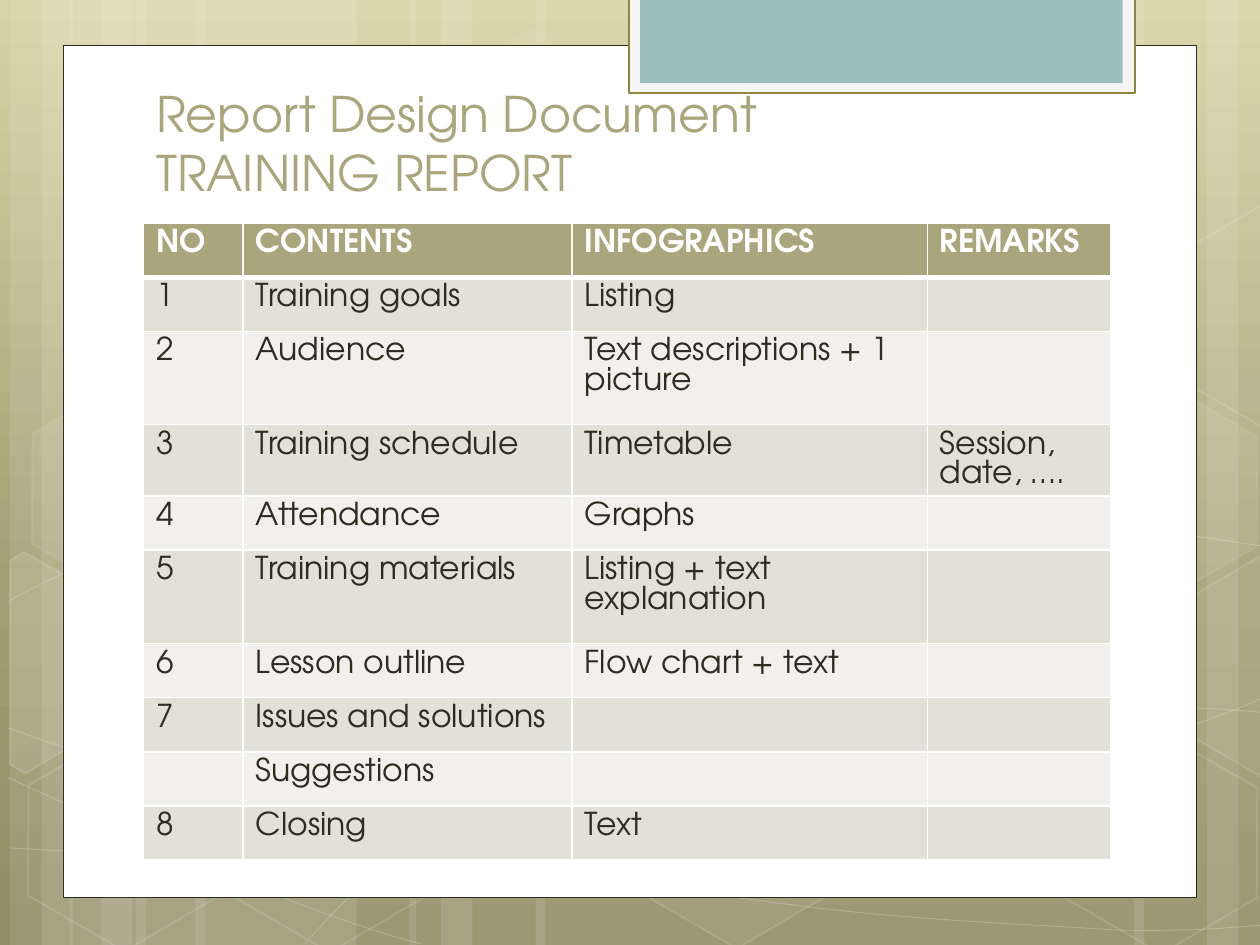
from copy import deepcopy
from dataclasses import dataclass
from lxml.etree import SubElement
from pptx import Presentation
from pptx.dml.color import RGBColor
from pptx.enum.shapes import MSO_SHAPE
from pptx.enum.text import MSO_ANCHOR, MSO_AUTO_SIZE, PP_ALIGN
from pptx.oxml.ns import qn
from pptx.util import Inches, Pt


@dataclass(frozen=True)
class Theme:
    font: str = "TeX Gyre Adventor"
    title_size: int = 28
    table_size: int = 18
    white: str = "FFFFFF"
    ink: str = "2F2B20"
    accent: str = "A9A57C"
    bands: tuple = ("E2E1D7", "F1F0EC")
    tab_frame: str = "F5F5F5"
    tab_line: str = "8D873E"
    tab: str = "9CBEBD"
    backdrop: tuple = ((0, "D7D3A4"), (0.62, "A29F74"), (1, "918D65"))


THEME = Theme()
SLIDE_WIDTH, SLIDE_HEIGHT = 10, 7.5

TITLE_LINES = ["Report Design Document", "TRAINING REPORT"]
ROWS = [
    ("NO", "CONTENTS", "INFOGRAPHICS", "REMARKS"),
    ("1", "Training goals", "Listing", ""),
    ("2", "Audience", "Text descriptions + 1 picture", ""),
    ("3", "Training schedule", "Timetable", "Session, date, …."),
    ("4", "Attendance", "Graphs", ""),
    ("5", "Training materials", "Listing + text explanation", ""),
    ("6", "Lesson outline", "Flow chart + text", ""),
    ("7", "Issues and solutions", "", ""),
    ("", "Suggestions", "", ""),
    ("8", "Closing", "Text", ""),
]
COLUMN_WIDTHS = [0.79, 2.61, 2.82, 1.46]
ROW_HEIGHT, TALL_ROW_HEIGHT = 0.43, 0.74
TALL_ROWS = (2, 5)
CONTENT_LEFT, CONTENT_WIDTH = 1.14, sum(COLUMN_WIDTHS)

STRIPES = [
    (1.08, 1.75), (0.08, 0.5), (0.33, 0.83), (1.55, 1.75), (0.55, 0.5), (0.8, 0.83),
    (7.33, 1.75), (9.58, 0.5), (9, 0.83), (4.25, 3.08), (3.25, 0.5), (3.5, 0.83),
]
CURVES = [
    [(0.07, 6.73), (0.61, 6.76), (1.15, 6.79), (1.9, 6.78), (2.65, 6.77), (3.58, 6.75), (4.58, 6.65),
     (5.58, 6.55), (7, 6.36), (7.92, 6.17), (8.83, 5.98), (9.77, 5.68), (10.07, 5.51)],
    [(0.07, 4.77), (0.36, 4.61), (0.65, 4.46), (1.21, 4.31), (1.78, 4.16), (2.59, 3.94), (3.47, 3.87),
     (4.36, 3.8), (5.44, 3.79), (6.54, 3.87), (7.64, 3.95), (9.47, 4.26), (10.07, 4.34)],
    [(0.06, 6.17), (1.27, 6.72), (2.47, 7.27), (3.34, 7.49)],
    [(0.07, 5.78), (0.38, 5.89), (0.7, 6), (1.28, 6.16), (1.86, 6.31), (2.73, 6.56), (3.57, 6.73),
     (4.4, 6.9), (5.45, 7.08), (6.28, 7.18), (7.11, 7.29), (8, 7.33), (8.53, 7.36),
     (9.05, 7.4), (9.19, 7.38), (9.45, 7.38), (9.71, 7.37), (9.89, 7.35), (10.07, 7.34)],
    [(2.42, 7.49), (2.6, 7.29), (2.78, 7.09), (3.02, 6.91), (3.26, 6.73), (3.6, 6.53), (3.88, 6.39),
     (4.16, 6.25), (4.33, 6.19), (4.7, 6.09), (5.06, 5.99), (5.73, 5.85), (6.08, 5.78),
     (6.44, 5.71), (6.49, 5.71), (6.8, 5.69), (7.11, 5.66), (7.6, 5.63), (7.94, 5.62),
     (8.29, 5.61), (8.86, 5.62), (8.86, 5.62), (9.08, 5.62), (9.31, 5.62), (9.53, 5.62),
     (9.71, 5.63), (9.88, 5.64), (9.97, 5.65), (10.06, 5.66), (10.03, 5.65), (10.06, 5.66)],
]
HEXAGON_SIZE = (1.75, 1.52)
HEXAGONS = [
    (3.34, 0.36, 4, 8), (4.97, 5.89, 6, 12), (0.11, 5.91, 0, 12),
    (0.14, 3.12, 7, 8), (1.74, 5.92, 0, 12), (7.53, 4.53, 10, 12),
    (8.34, 5.93, 0, 12), (8.34, 3.14, 7, 8),
]
CUT_HEXAGONS = [
    ([(0.08, 4.45), (0.19, 4.38), (0.96, 4.82), (0.95, 5.7), (0.2, 6.14), (0.08, 6.07)], 10),
    ([(9.26, 4.85), (10.01, 4.41), (10.09, 4.46), (10.09, 6.13), (10.02, 6.17), (9.26, 5.73)], 4),
    ([(9.26, 2.07), (10.01, 1.63), (10.1, 1.68), (10.09, 3.35), (10.02, 3.39), (9.26, 2.95)], 0),
]
PANELS = [
    ((0.5, 0.36, 9, 6.76), THEME.white, THEME.ink, 0.5),
    ((4.99, -0.02, 4.02, 0.76), THEME.tab_frame, THEME.tab_line, 1.25),
    ((5.08, -0.02, 3.83, 0.68), THEME.tab, None, 0),
]


def set_opacity(fill, percent):
    color = fill._xPr.find(qn("a:solidFill"))[0]
    SubElement(color, qn("a:alpha"), val=str(percent * 1000))


def paint(shape, fill=None, opacity=100, line=None, width=0, line_opacity=100):
    shape.shadow.inherit = False
    for target, color, percent in ((shape.fill, fill, opacity), (shape.line.fill, line, line_opacity)):
        if color is None or percent == 0:
            target.background()
            continue
        target.solid()
        target.fore_color.rgb = RGBColor.from_string(color)
        if percent < 100:
            set_opacity(target, percent)
    if line:
        shape.line.width = Pt(width)


def add_box(slide, kind, box):
    return slide.shapes.add_shape(kind, *map(Inches, box))


def add_outline(slide, points, close):
    corners = [(Inches(x), Inches(y)) for x, y in points]
    builder = slide.shapes.build_freeform(*corners[0], scale=1)
    builder.add_line_segments(corners[1:], close=close)
    return builder.convert_to_shape()


def add_curve(slide, points):
    shape = add_outline(slide, points, False)
    outline = shape._element.find(".//" + qn("a:path"))
    segments = outline.findall(qn("a:lnTo"))
    for start in range(0, len(segments), 3):
        bezier = SubElement(outline, qn("a:cubicBezTo"))
        for segment in segments[start:start + 3]:
            bezier.append(segment[0])
            outline.remove(segment)
    return shape


def add_run(paragraph, text, size, color, bold=False):
    run = paragraph.add_run()
    run.text = text
    run.font.name, run.font.size, run.font.bold = THEME.font, Pt(size), bold
    run.font.color.rgb = RGBColor.from_string(color)


def add_backdrop(slide):
    fill = slide.background.fill
    fill.gradient()
    fill.gradient_angle = 270
    stop_list = slide.element.find(".//" + qn("a:gsLst"))
    stop_list.append(deepcopy(stop_list[-1]))
    for stop, (position, color) in zip(fill.gradient_stops, THEME.backdrop):
        stop.position = position
        stop.color.rgb = RGBColor.from_string(color)
    for left, width in STRIPES:
        stripe = add_box(slide, MSO_SHAPE.RECTANGLE, (left, 0, width, SLIDE_HEIGHT))
        paint(stripe, THEME.white, 10)
    for points in CURVES:
        paint(add_curve(slide, points), line=THEME.white, width=0.5, line_opacity=20)
    for left, top, opacity, line_opacity in HEXAGONS:
        hexagon = add_box(slide, MSO_SHAPE.HEXAGON, (left, top, *HEXAGON_SIZE))
        hexagon.adjustments[0] = 0.285
        hexagon.rotation = 30
        paint(hexagon, THEME.white, opacity, THEME.white, 1, line_opacity)
    for points, opacity in CUT_HEXAGONS:
        paint(add_outline(slide, points, True), THEME.white, opacity, THEME.white, 1, 12)
    for box, fill_color, line_color, width in PANELS:
        paint(add_box(slide, MSO_SHAPE.RECTANGLE, box), fill_color, line=line_color, width=width)


def add_title(slide):
    title = slide.shapes.title
    slide.shapes._spTree.append(title._element)
    title.left, title.top, title.width, title.height = map(Inches, (CONTENT_LEFT, 0.91, CONTENT_WIDTH, 0.74))
    frame = title.text_frame
    frame.word_wrap, frame.auto_size = True, MSO_AUTO_SIZE.NONE
    frame.vertical_anchor = MSO_ANCHOR.BOTTOM
    paragraph = frame.paragraphs[0]
    paragraph.alignment = PP_ALIGN.LEFT
    for index, line in enumerate(TITLE_LINES):
        if index:
            paragraph.add_line_break()
        add_run(paragraph, line, THEME.title_size, THEME.accent)


def set_borders(cell, row):
    widths = {"L": 1, "R": 1, "T": 3 if row == 1 else 1, "B": 3 if row == 0 else 1}
    properties = cell._tc.get_or_add_tcPr()
    for side, width in widths.items():
        border = SubElement(properties, qn("a:ln" + side), w=str(Pt(width)))
        SubElement(SubElement(border, qn("a:solidFill")), qn("a:srgbClr"), val=THEME.white)


def add_contents_table(slide):
    heights = [TALL_ROW_HEIGHT if row in TALL_ROWS else ROW_HEIGHT for row in range(len(ROWS))]
    box = map(Inches, (CONTENT_LEFT, 1.77, CONTENT_WIDTH, sum(heights)))
    table = slide.shapes.add_table(len(ROWS), len(COLUMN_WIDTHS), *box).table
    for column, width in zip(table.columns, COLUMN_WIDTHS):
        column.width = Inches(width)
    for row, (texts, height) in enumerate(zip(ROWS, heights)):
        table.rows[row].height = Inches(height)
        header = row == 0
        for column, text in enumerate(texts):
            cell = table.cell(row, column)
            set_borders(cell, row)
            cell.fill.solid()
            cell.fill.fore_color.rgb = RGBColor.from_string(THEME.accent if header else THEME.bands[(row - 1) % 2])
            if text:
                color = THEME.white if header else THEME.ink
                add_run(cell.text_frame.paragraphs[0], text, THEME.table_size, color, header)


def main():
    presentation = Presentation()
    presentation.slide_width, presentation.slide_height = Inches(SLIDE_WIDTH), Inches(SLIDE_HEIGHT)
    slide = presentation.slides.add_slide(presentation.slide_layouts[5])
    add_backdrop(slide)
    add_title(slide)
    add_contents_table(slide)
    presentation.save("out.pptx")


if __name__ == "__main__":
    main()
